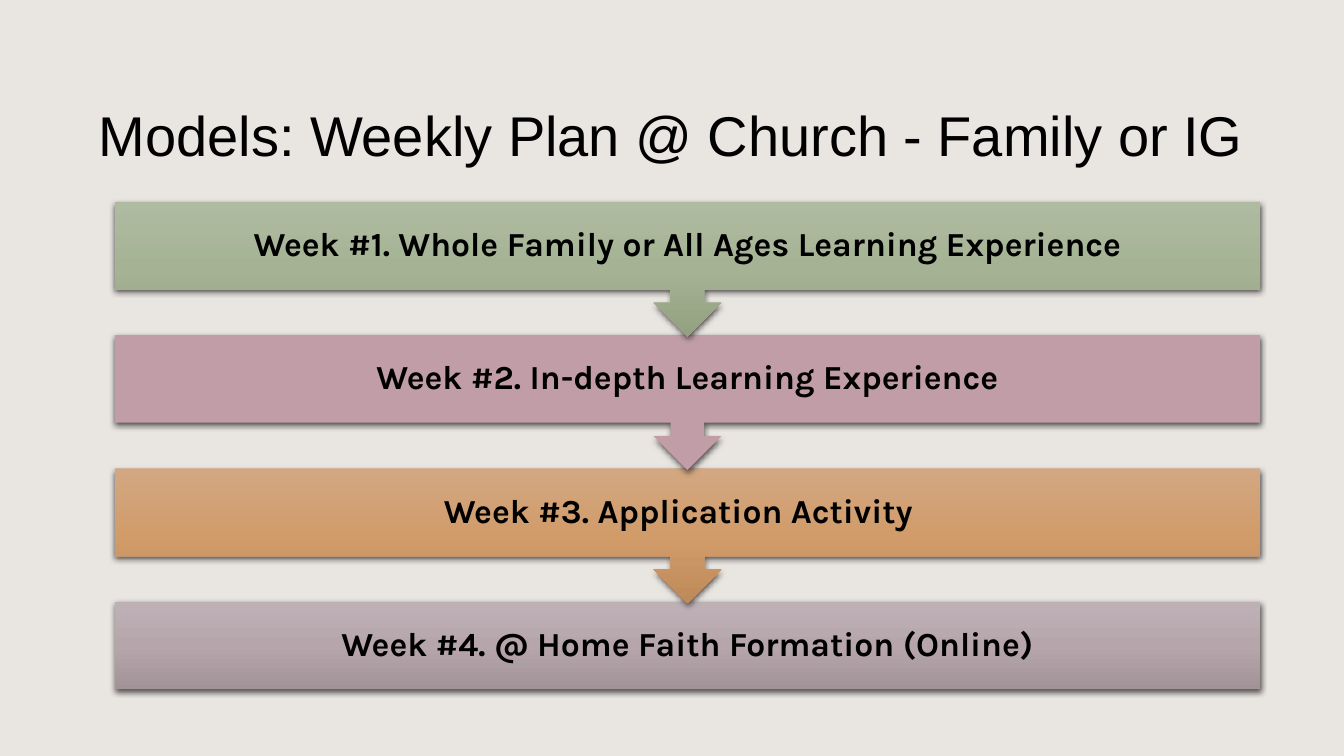
"""Build the weekly plan slide with four week banners."""
import lxml.etree
import pptx
import pptx.dml.color
import pptx.enum.shapes
import pptx.enum.text
import pptx.oxml.ns
import pptx.util

Pt = pptx.util.Pt
RGB = pptx.dml.color.RGBColor
SHAPE = pptx.enum.shapes.MSO_SHAPE
qn = pptx.oxml.ns.qn

BACKGROUND = RGB(0xE9, 0xE5, 0xE1)
BLACK = RGB(0, 0, 0)
GREEN = (RGB(0xAF, 0xBB, 0xA1), RGB(0xA5, 0xB3, 0x94), RGB(0x93, 0xA1, 0x81))
PINK = (RGB(0xC1, 0x9D, 0xA7),)
ORANGE = (RGB(0xD2, 0xA7, 0x81), RGB(0xD1, 0x9C, 0x6A), RGB(0xBF, 0x8A, 0x59))
MAUVE = (RGB(0xBE, 0xB1, 0xB6), RGB(0xB6, 0xA6, 0xAC), RGB(0xA2, 0x93, 0x98))

WEEKS = [
    ("Week #1. Whole Family or All Ages Learning Experience", GREEN, 14),
    ("Week #2. In-depth Learning Experience", PINK, 14),
    ("Week #3. Application Activity", ORANGE, 27),
    ("Week #4. @ Home Faith Formation (Online)", MAUVE, 14),
]
LEFT, TOP, WIDTH, STEP = 82, 144, 818, 95.3
BOX_HEIGHT, CALLOUT_HEIGHT = 62.6, 96.4


def set_text(sp, text, font, size, bold=False, spacing=1.0, margins=(7.2, 3.6, 7.2, 3.6)):
    tf = sp.text_frame
    tf.word_wrap = True
    tf.auto_size = pptx.enum.text.MSO_AUTO_SIZE.NONE
    tf.vertical_anchor = pptx.enum.text.MSO_ANCHOR.MIDDLE
    tf.margin_left, tf.margin_top, tf.margin_right, tf.margin_bottom = map(Pt, margins)
    p = tf.paragraphs[0]
    p.alignment = pptx.enum.text.PP_ALIGN.CENTER
    p.line_spacing = spacing
    r = p.add_run()
    r.text = text
    r.font.name, r.font.size, r.font.bold = font, Pt(size), bold
    r.font.color.rgb = BLACK


def set_fill(sp, colors):
    if len(colors) == 1:
        sp.fill.solid()
        sp.fill.fore_color.rgb = colors[0]
        return
    sp.fill.gradient()
    sp.fill.gradient_angle = 270
    stops = sp._element.spPr.find(".//" + qn("a:gsLst"))
    for gs in list(stops):
        stops.remove(gs)
    for i, color in enumerate(colors):
        pos = str(100000 * i // (len(colors) - 1))
        gs = lxml.etree.SubElement(stops, qn("a:gs"), pos=pos)
        lxml.etree.SubElement(gs, qn("a:srgbClr"), val=str(color))


def set_shadow(sp):
    sp.shadow.inherit = False
    effects = sp._element.spPr.find(qn("a:effectLst"))
    shadow = lxml.etree.SubElement(
        effects, qn("a:outerShdw"), blurRad=str(Pt(4.5)), dist=str(Pt(1.5)),
        dir="5400000", rotWithShape="0")
    color = lxml.etree.SubElement(shadow, qn("a:srgbClr"), val=str(BLACK))
    lxml.etree.SubElement(color, qn("a:alpha"), val="63000")


def add_banner(slide, kind, top, height, text, colors, right):
    sp = slide.shapes.add_shape(kind, Pt(LEFT), Pt(top), Pt(WIDTH), Pt(height))
    set_fill(sp, colors)
    sp.line.fill.background()
    set_shadow(sp)
    set_text(sp, text, "Karla", 24, bold=True, spacing=0.9, margins=(14, 14, right, 14))


def add_title(slide, text):
    sp = slide.shapes.title
    sp.left, sp.top, sp.width, sp.height = Pt(30), Pt(29), Pt(898), Pt(133)
    set_text(sp, text, "Arial", 40)
    sp.left = Pt(30)


def main():
    prs = pptx.Presentation()
    prs.slide_width, prs.slide_height = Pt(960), Pt(540)
    slide = prs.slides.add_slide(prs.slide_layouts[5])
    slide.background.fill.solid()
    slide.background.fill.fore_color.rgb = BACKGROUND
    add_title(slide, "Models: Weekly Plan @ Church - Family or IG")
    last = len(WEEKS) - 1
    for i in range(last, -1, -1):
        kind, height = SHAPE.DOWN_ARROW_CALLOUT, CALLOUT_HEIGHT
        if i == last:
            kind, height = SHAPE.RECTANGLE, BOX_HEIGHT
        add_banner(slide, kind, TOP + i * STEP, height, *WEEKS[i])
    prs.save("out.pptx")


if __name__ == "__main__":
    main()
